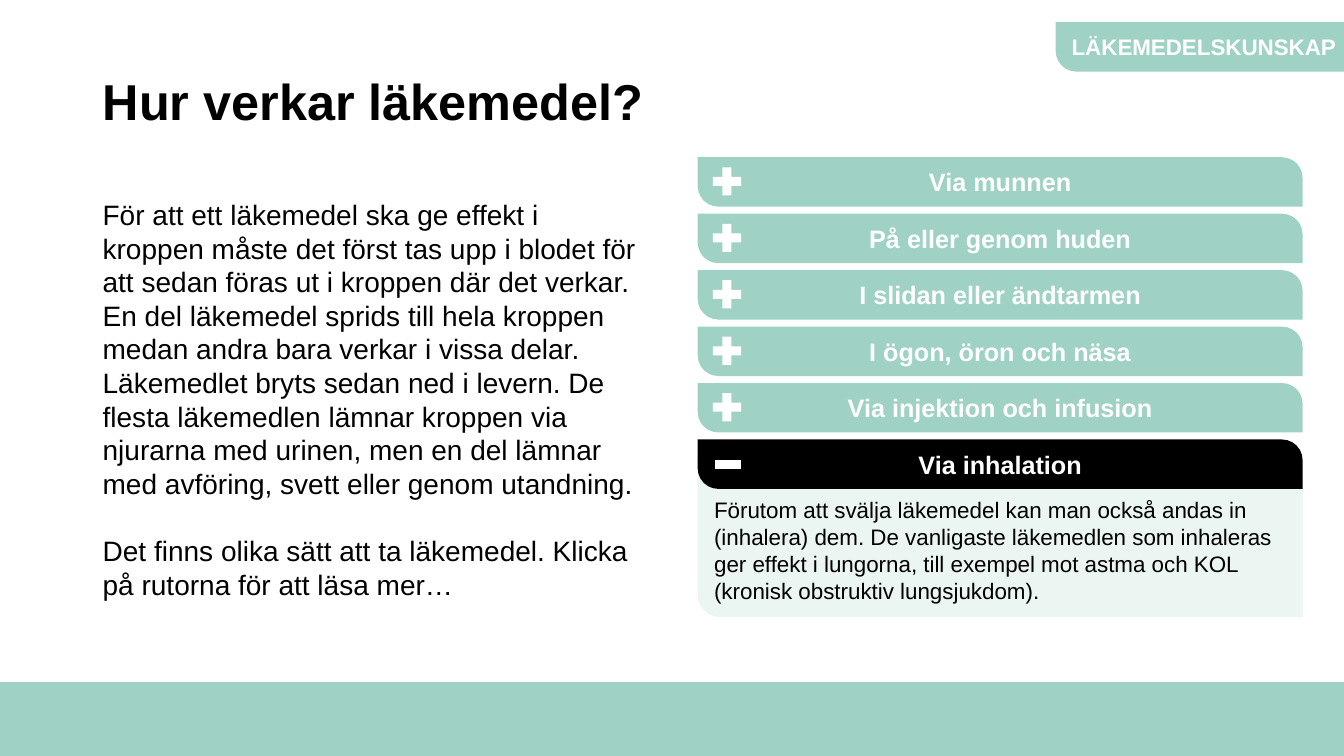
from dataclasses import dataclass

from pptx import Presentation
from pptx.dml.color import RGBColor
from pptx.enum.shapes import MSO_SHAPE as SHAPE
from pptx.enum.text import MSO_ANCHOR as ANCHOR, PP_ALIGN as ALIGN
from pptx.shapes.autoshape import Shape
from pptx.slide import Slide
from pptx.util import Inches, Pt

MINT, PALE, BLACK, WHITE = "9FD2C5", "EBF5F2", "000000", "FFFFFF"
BAR_LEFT, BAR_TOP, BAR_WIDTH, BAR_HEIGHT, BAR_PITCH = 6.92, 1.56, 6, 0.49, 0.56
BAR_ROUNDING = 0.417


@dataclass
class Box:
    left: float
    top: float
    width: float
    height: float

    def emu(self) -> tuple[int, ...]:
        return tuple(Inches(v) for v in (self.left, self.top, self.width, self.height))


@dataclass
class Bar:
    label: str
    is_open: bool = False


BARS = [
    Bar("Via munnen"),
    Bar("På eller genom huden"),
    Bar("I slidan eller ändtarmen"),
    Bar("I ögon, öron och näsa"),
    Bar("Via injektion och infusion"),
    Bar("Via inhalation", is_open=True),
]
TITLE = "Hur verkar läkemedel?"
BODY = [
    "För att ett läkemedel ska ge effekt i kroppen måste det först tas upp i blodet "
    "för att sedan föras ut i kroppen där det verkar. En del läkemedel sprids till "
    "hela kroppen medan andra bara verkar i vissa delar. Läkemedlet bryts sedan ned "
    "i levern. De flesta läkemedlen lämnar kroppen via njurarna med urinen, men en "
    "del lämnar med avföring, svett eller genom utandning.",
    "Det finns olika sätt att ta läkemedel. Klicka på rutorna för att läsa mer…",
]
INHALATION = (
    "Förutom att svälja läkemedel kan man också andas in (inhalera) dem. De "
    "vanligaste läkemedlen som inhaleras ger effekt i lungorna, till exempel mot "
    "astma och KOL (kronisk obstruktiv lungsjukdom)."
)


def rgb(color: str) -> RGBColor:
    return RGBColor.from_string(color)


def add_filled(s: Slide, kind: SHAPE, box: Box, color: str) -> Shape:
    sp = s.shapes.add_shape(kind, *box.emu())
    sp.shadow.inherit = False
    sp.fill.solid()
    sp.fill.fore_color.rgb = rgb(color)
    sp.line.fill.background()
    return sp


def add_rounded(s: Slide, box: Box, color: str, rounding: float) -> Shape:
    """Add a box rounded at its top right and bottom left corners."""
    sp = add_filled(s, SHAPE.ROUND_2_DIAG_RECTANGLE, box, color)
    sp.adjustments[0] = 0
    sp.adjustments[1] = rounding
    return sp


def write(sp: Shape, paragraphs: list[str], size: float, color: str = BLACK,
          bold: bool = False, align: ALIGN = ALIGN.LEFT, anchor: ANCHOR = ANCHOR.TOP,
          line_spacing: float = 1.0, gap: float = 0) -> None:
    tf = sp.text_frame
    tf.word_wrap = True
    tf.vertical_anchor = anchor
    for i, text in enumerate(paragraphs):
        p = tf.add_paragraph() if i else tf.paragraphs[0]
        p.text = text
        p.alignment = align
        p.line_spacing = line_spacing
        if i:
            p.space_before = Pt(gap)
        p.font.name = "Arial"
        p.font.size = Pt(size)
        p.font.bold = bold
        p.font.color.rgb = rgb(color)


def add_bar(s: Slide, bar: Bar, top: float) -> None:
    sp = add_rounded(s, Box(BAR_LEFT, top, BAR_WIDTH, BAR_HEIGHT),
                     BLACK if bar.is_open else MINT, BAR_ROUNDING)
    write(sp, [bar.label], 18, WHITE, True, ALIGN.CENTER, ANCHOR.MIDDLE)
    if bar.is_open:
        add_filled(s, SHAPE.MATH_MINUS, Box(BAR_LEFT + 0.12, top + 0.07, 0.36, 0.36), WHITE)
    else:
        add_filled(s, SHAPE.MATH_PLUS, Box(BAR_LEFT + 0.1, top + 0.05, 0.38, 0.38), WHITE)


def main() -> None:
    prs = Presentation()
    prs.slide_width, prs.slide_height = Inches(13.33), Inches(7.5)
    s = prs.slides.add_slide(prs.slide_layouts[6])

    footer = add_filled(s, SHAPE.RECTANGLE, Box(0, 6.77, 13.33, 0.73), MINT)
    footer.line.color.rgb = rgb(MINT)
    footer.line.width = Pt(1)

    panel = add_rounded(s, Box(BAR_LEFT, 4.55, BAR_WIDTH, 1.57), PALE, 0.14)
    panel.text_frame.margin_top = Inches(0.31)
    write(panel, [INHALATION], 16)

    title = s.shapes.add_textbox(*Box(0.92, 0.71, 11.5, 1.1).emu())
    write(title, [TITLE], 36, bold=True, line_spacing=0.9)

    tag = add_rounded(s, Box(10.47, 0.22, 3.62, BAR_HEIGHT), MINT, BAR_ROUNDING)
    write(tag, ["LÄKEMEDELSKUNSKAP"], 16, WHITE, True, anchor=ANCHOR.MIDDLE)

    body = s.shapes.add_textbox(*Box(0.92, 1.91, 5.5, 4.14).emu())
    write(body, BODY, 20, gap=24)

    for i, bar in enumerate(BARS):
        add_bar(s, bar, BAR_TOP + i * BAR_PITCH)

    prs.save("out.pptx")


if __name__ == "__main__":
    main()
